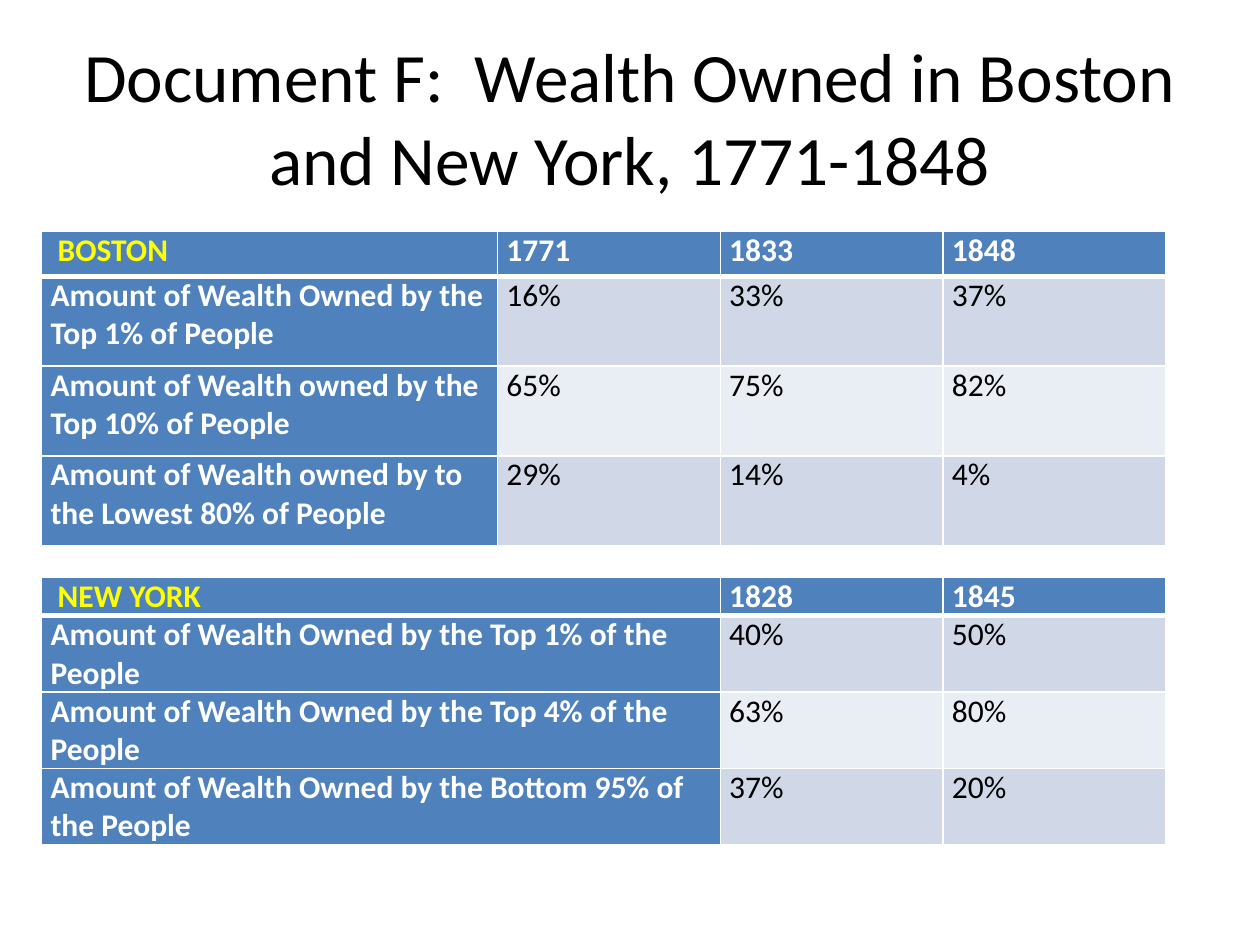
"""Build a slide with two tables of wealth owned in Boston and New York."""
from dataclasses import dataclass

from lxml.etree import SubElement
from pptx import Presentation
from pptx.dml.color import RGBColor
from pptx.enum.text import MSO_ANCHOR, PP_ALIGN
from pptx.oxml.ns import qn
from pptx.util import Cm, Pt


@dataclass(frozen=True)
class Theme:
    font: str = "Calibri"
    title: float = 39.6
    body: float = 18
    black: str = "000000"
    white: str = "FFFFFF"
    yellow: str = "FFFF00"
    blue: str = "4F81BD"
    bands: tuple = ("D0D8E8", "E9EDF4")
    thin: float = 1
    thick: float = 3


THEME = Theme()
LEFT = 0.84
YEAR = 4.49

BOSTON = [
    ("BOSTON", "1771", "1833", "1848"),
    ("Amount of Wealth Owned by the Top 1% of People", "16%", "33%", "37%"),
    ("Amount of Wealth owned by the Top 10% of People", "65%", "75%", "82%"),
    ("Amount of Wealth owned by to the Lowest 80% of People", "29%", "14%", "4%"),
]
YORK = [
    ("NEW YORK", "1828", "1845"),
    ("Amount of Wealth Owned by the Top 1% of the People", "40%", "50%"),
    ("Amount of Wealth Owned by the Top 4% of the People", "63%", "80%"),
    ("Amount of Wealth Owned by the Bottom 95% of the People", "37%", "20%"),
]


def add_run(para, text, size, color, bold=False):
    run = para.add_run()
    run.text = text
    run.font.name = THEME.font
    run.font.size = Pt(size)
    run.font.bold = bold
    run.font.color.rgb = RGBColor.from_string(color)


def add_title(slide, text):
    box = slide.shapes.add_textbox(Cm(1.27), Cm(0.76), Cm(22.86), Cm(3.18))
    frame = box.text_frame
    frame.word_wrap = True
    frame.vertical_anchor = MSO_ANCHOR.MIDDLE
    para = frame.paragraphs[0]
    para.alignment = PP_ALIGN.CENTER
    add_run(para, text, THEME.title, THEME.black)


def add_lines(cell, row):
    props = cell._tc.get_or_add_tcPr()
    widths = {
        "L": THEME.thin,
        "R": THEME.thin,
        "T": THEME.thick if row == 1 else THEME.thin,
        "B": THEME.thick if row == 0 else THEME.thin,
    }
    for side, width in widths.items():
        line = SubElement(props, qn(f"a:ln{side}"), w=str(Pt(width)))
        fill = SubElement(line, qn("a:solidFill"))
        SubElement(fill, qn("a:srgbClr"), val=THEME.white)


def fill_cell(cell, text, row, col):
    cell.margin_left = cell.margin_right = Cm(0.18)
    cell.margin_top = cell.margin_bottom = 0
    add_lines(cell, row)
    head = row == 0 or col == 0
    shade = THEME.blue if head else THEME.bands[(row - 1) % 2]
    cell.fill.solid()
    cell.fill.fore_color.rgb = RGBColor.from_string(shade)
    para = cell.text_frame.paragraphs[0]
    color = THEME.white if head else THEME.black
    if row == col == 0:
        add_run(para, " ", THEME.body, color, True)
        color = THEME.yellow
    add_run(para, text, THEME.body, color, head)


def add_grid(slide, rows, top, first, head, high):
    widths = [first] + [YEAR] * (len(rows[0]) - 1)
    heights = [head] + [high] * (len(rows) - 1)
    frame = slide.shapes.add_table(
        len(rows), len(widths), Cm(LEFT), Cm(top), Cm(sum(widths)), Cm(sum(heights))
    )
    table = frame.table
    for col, width in zip(table.columns, widths):
        col.width = Cm(width)
    for row, height in zip(table.rows, heights):
        row.height = Cm(height)
    for r, texts in enumerate(rows):
        for c, text in enumerate(texts):
            fill_cell(table.cell(r, c), text, r, c)


def main():
    deck = Presentation()
    deck.slide_width, deck.slide_height = Cm(25.4), Cm(19.05)
    slide = deck.slides.add_slide(deck.slide_layouts[6])
    add_title(slide, "Document F:  Wealth Owned in Boston and New York, 1771-1848")
    add_grid(slide, BOSTON, top=4.66, first=9.19, head=0.91, high=1.81)
    add_grid(slide, YORK, top=11.64, first=9.19 + YEAR, head=0.77, high=1.54)
    deck.save("out.pptx")


if __name__ == "__main__":
    main()
